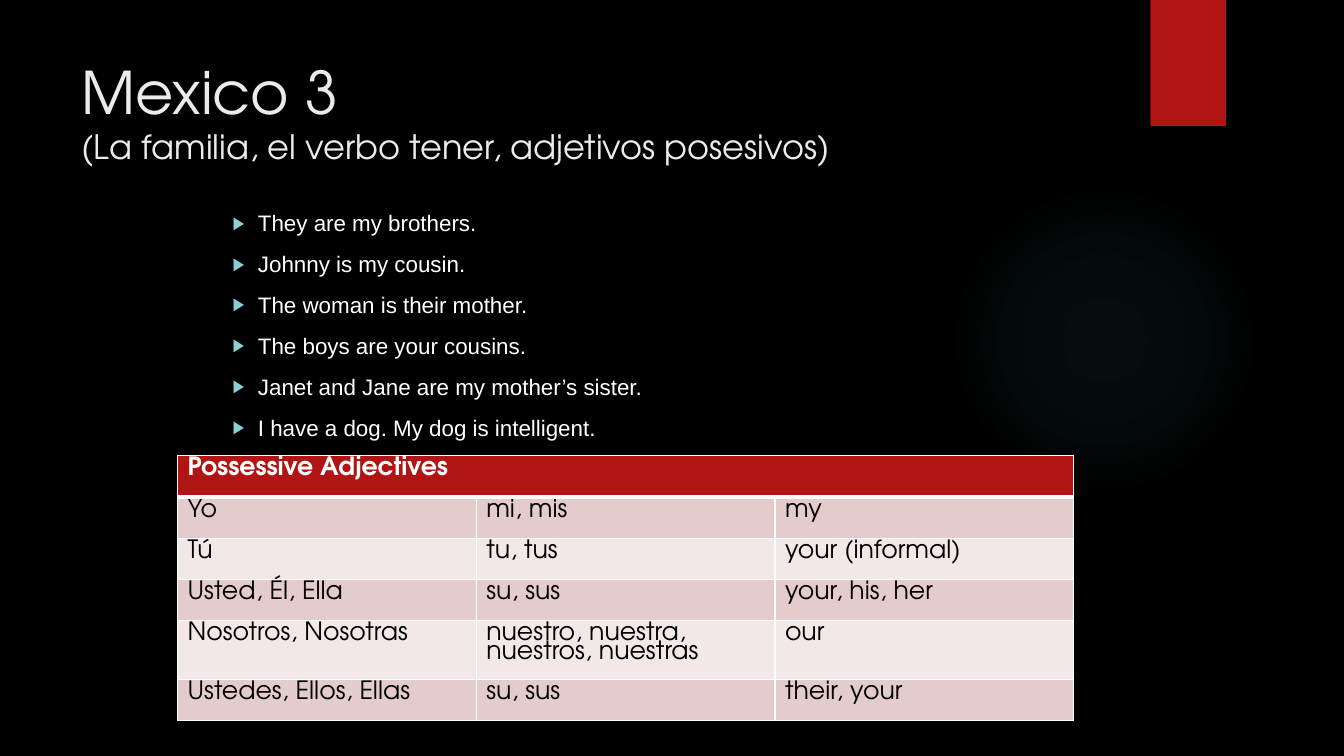
import pptx
import pptx.util
import pptx.oxml
import pptx.oxml.ns
import pptx.dml.color
import pptx.enum.shapes
import pptx.enum.text
from dataclasses import dataclass
from pptx.util import Inches


@dataclass(frozen=True)
class Theme:
    background: str = "000000"
    title: str = "EBEBEB"
    white: str = "FFFFFF"
    black: str = "000000"
    red: str = "B01513"
    teal: str = "50B9C1"
    bullet: str = "8AD0D6"
    bands: tuple = ("E4CCCC", "F2E8E7")
    heading_font: str = "TeX Gyre Adventor"
    body_font: str = "Arial"
    title_size: int = 42
    subtitle_size: int = 24
    table_size: int = 18
    body_size: int = 16


theme = Theme()
rgb = pptx.dml.color.RGBColor.from_string
NAMESPACE = pptx.oxml.ns.nsdecls("a")


def style(span, font, size, color, bold=False):
    span.font.name = font
    span.font.size = pptx.util.Pt(size)
    span.font.color.rgb = rgb(color)
    span.font.bold = bold


def add_xml(parent, xml):
    """Append an element whose first tag still lacks the namespace."""
    tag, rest = xml[:-2].split(" ", 1) if xml.endswith("/>") else xml.split(" ", 1)
    ending = "/>" if xml.endswith("/>") else ""
    parent.append(pptx.oxml.parse_xml(f"{tag} {NAMESPACE} {rest}{ending}"))


deck = pptx.Presentation()
deck.slide_width = Inches(13.33)
deck.slide_height = Inches(7.5)
page = deck.slides.add_slide(deck.slide_layouts[5])
page.background.fill.solid()
page.background.fill.fore_color.rgb = rgb(theme.background)

# Background glow and red tab
shape_types = pptx.enum.shapes.MSO_SHAPE
glow = page.shapes.add_shape(
    shape_types.OVAL, Inches(9.41), Inches(1.83), Inches(3.08), Inches(3.08))
glow.shadow.inherit = False
glow.line.fill.background()
glow.fill.gradient()
gradient = glow.fill._xPr.find(pptx.oxml.ns.qn("a:gradFill"))
for child in list(gradient):
    gradient.remove(child)
stops = "".join(
    f'<a:gs pos="{position * 1000}"><a:srgbClr val="{theme.teal}">'
    f'<a:alpha val="{alpha * 1000}"/></a:srgbClr></a:gs>'
    for position, alpha in ((0, 7), (36, 6), (69, 0), (100, 0)))
add_xml(gradient, f'<a:gsLst >{stops}</a:gsLst>')
add_xml(gradient, '<a:path path="circle"><a:fillToRect l="50000" t="50000" '
                  'r="50000" b="50000"/></a:path>')

tab = page.shapes.add_shape(
    shape_types.RECTANGLE, Inches(11.41), 0, Inches(0.75), Inches(1.25))
tab.shadow.inherit = False
tab.line.fill.background()
tab.fill.solid()
tab.fill.fore_color.rgb = rgb(theme.red)

# Title
title = page.shapes.title
title.left, title.top = Inches(0.71), Inches(0.5)
title.width, title.height = Inches(10.29), Inches(1.53)
frame = title.text_frame
frame.text = "Mexico 3\v(La familia, el verbo tener, adjetivos posesivos)"
frame.word_wrap = True
frame.auto_size = pptx.enum.text.MSO_AUTO_SIZE.NONE
frame.vertical_anchor = pptx.enum.text.MSO_ANCHOR.TOP
para = frame.paragraphs[0]
para.alignment = pptx.enum.text.PP_ALIGN.LEFT
for span, size in zip(para.runs, (theme.title_size, theme.subtitle_size)):
    style(span, theme.heading_font, size, theme.title)

# Sentences to translate
sentences = (
    "They are my brothers.",
    "Johnny is my cousin.",
    "The woman is their mother.",
    "The boys are your cousins.",
    "Janet and Jane are my mother’s sister.",
    "I have a dog. My dog is intelligent.",
)
box = page.shapes.add_textbox(Inches(1.21), Inches(2.03), Inches(9.78), Inches(4.59))
frame = box.text_frame
frame.word_wrap = True
for index, sentence in enumerate(sentences):
    para = frame.paragraphs[0] if index == 0 else frame.add_paragraph()
    para.text = sentence
    para.level = 2
    para.space_before = pptx.util.Pt(10 if index else 0)
    properties = para._p.get_or_add_pPr()
    properties.set("marL", str(Inches(1.25)))
    properties.set("indent", str(Inches(-0.25)))
    add_xml(properties, f'<a:buClr ><a:srgbClr val="{theme.bullet}"/></a:buClr>')
    add_xml(properties, '<a:buSzPct val="80000"/>')
    add_xml(properties, f'<a:buFont typeface="{theme.body_font}"/>')
    add_xml(properties, '<a:buChar char="▶"/>')
    style(para.runs[0], theme.body_font, theme.body_size, theme.white)

# Possessive adjectives table
rows = (
    ("Possessive Adjectives", "", ""),
    ("Yo", "mi, mis", "my"),
    ("Tú", "tu, tus", "your (informal)"),
    ("Usted, Él, Ella", "su, sus", "your, his, her"),
    ("Nosotros, Nosotras", "nuestro, nuestra, nuestros, nuestras", "our"),
    ("Ustedes, Ellos, Ellas", "su, sus", "their, your"),
)
row_height = Inches(0.41)
table = page.shapes.add_table(
    len(rows), 3, Inches(1.76), Inches(4.52), Inches(8.89), row_height * len(rows)).table
for row_index, texts in enumerate(rows):
    table.rows[row_index].height = row_height
    header = row_index == 0
    for column_index, text in enumerate(texts):
        cell = table.cell(row_index, column_index)
        cell.text = text
        para = cell.text_frame.paragraphs[0]
        para.line_spacing = 0.8
        for span in para.runs:
            style(span, theme.heading_font, theme.table_size,
                  theme.white if header else theme.black, bold=header)
        properties = cell._tc.get_or_add_tcPr()
        for side in "LRTB":
            thick = (row_index, side) in ((0, "B"), (1, "T"))
            width = pptx.util.Pt(3 if thick else 1)
            add_xml(properties, f'<a:ln{side} w="{width}"><a:solidFill><a:srgbClr '
                                f'val="{theme.white}"/></a:solidFill></a:ln{side}>')
        cell.fill.solid()
        cell.fill.fore_color.rgb = rgb(
            theme.red if header else theme.bands[(row_index - 1) % 2])
table.cell(0, 0).merge(table.cell(0, 2))

deck.save("out.pptx")
